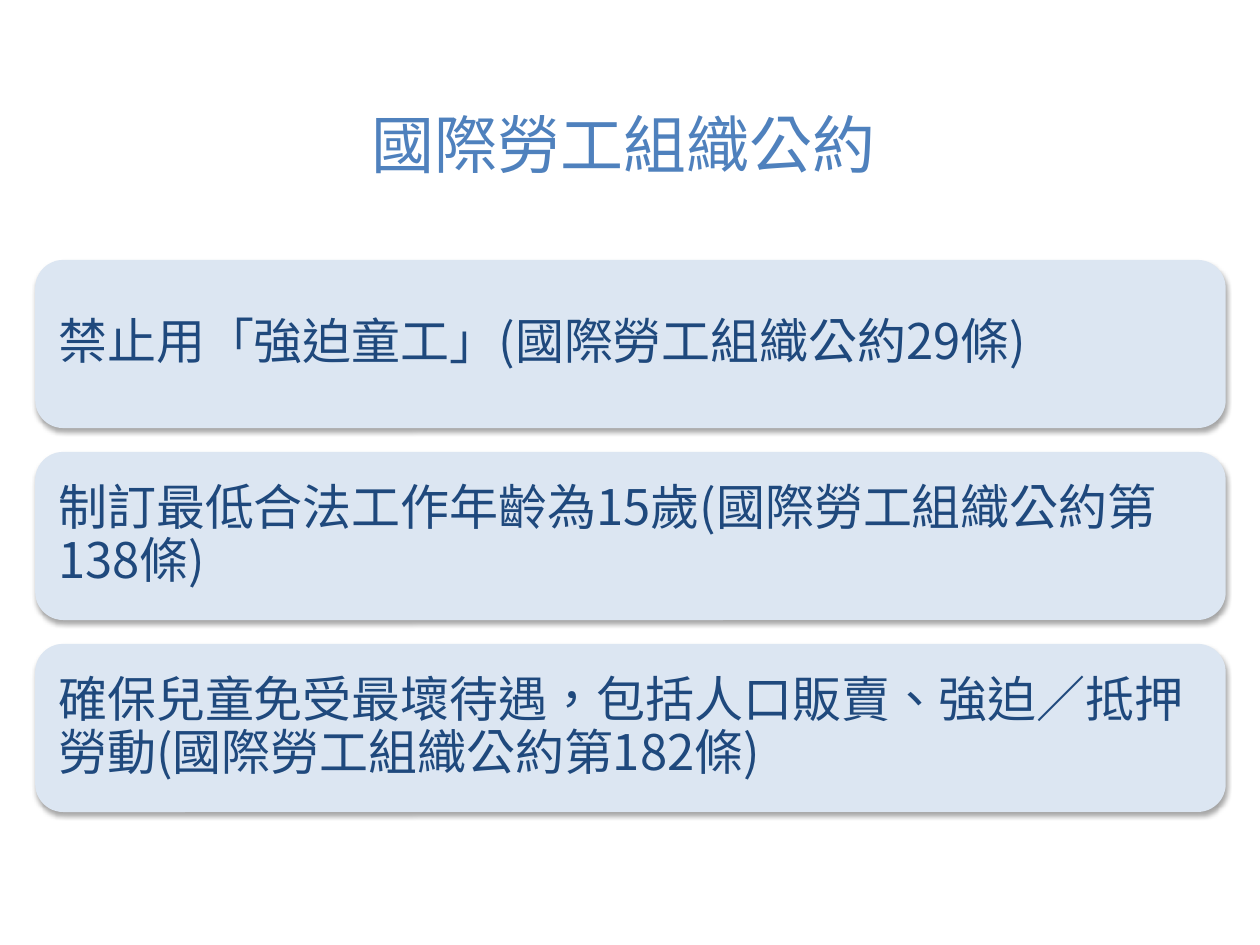
import lxml.etree
import pptx
import pptx.dml.color
import pptx.enum.shapes
import pptx.enum.text
import pptx.oxml
import pptx.oxml.ns
import pptx.util

Cm = pptx.util.Cm
Pt = pptx.util.Pt
RGBColor = pptx.dml.color.RGBColor

TITLE_BLUE = RGBColor(0x4F, 0x81, 0xBD)
PANEL_BLUE = RGBColor(0xDC, 0xE6, 0xF2)
TEXT_BLUE = RGBColor(0x1F, 0x49, 0x7D)
FONT = "Noto Sans CJK SC"

CONVENTIONS = [
    "禁止用「強迫童工」(國際勞工組織公約29條)",
    "制訂最低合法工作年齡為15歲(國際勞工組織公約第138條)",
    "確保兒童免受最壞待遇，包括人口販賣、強迫／抵押勞動(國際勞工組織公約第182條)",
]

SHADOW = (
    f'<a:effectLst {pptx.oxml.ns.nsdecls("a")}>'
    f'<a:outerShdw blurRad="{Pt(3.1)}" dist="{Pt(1.8)}" dir="5400000" rotWithShape="0">'
    '<a:srgbClr val="000000"><a:alpha val="35000"/></a:srgbClr>'
    "</a:outerShdw></a:effectLst>"
)


def write_text(text_frame, text, size, color, alignment):
    text_frame.word_wrap = True
    text_frame.vertical_anchor = pptx.enum.text.MSO_ANCHOR.MIDDLE
    text_frame.text = text
    paragraph = text_frame.paragraphs[0]
    paragraph.alignment = alignment
    run = paragraph.runs[0]
    run.font.size = Pt(size)
    run.font.name = FONT
    run.font.color.rgb = color
    properties = run._r.get_or_add_rPr()
    properties.set("lang", "zh-TW")
    east_asian = lxml.etree.SubElement(properties, pptx.oxml.ns.qn("a:ea"))
    east_asian.set("typeface", FONT)
    return paragraph


def add_title(slide, left, top, width, height):
    text_frame = slide.shapes.add_textbox(left, top, width, height).text_frame
    write_text(text_frame, "國際勞工組織公約", 36, TITLE_BLUE, pptx.enum.text.PP_ALIGN.CENTER)
    text_frame.margin_top = Cm(0.43)
    text_frame.margin_right = Cm(0.55)


def add_panel(slide, text, left, top, width, height):
    panel = slide.shapes.add_shape(
        pptx.enum.shapes.MSO_SHAPE.ROUNDED_RECTANGLE, left, top, width, height
    )
    panel.fill.solid()
    panel.fill.fore_color.rgb = PANEL_BLUE
    panel.line.fill.background()
    panel.shadow.inherit = False
    properties = panel._element.spPr
    properties.replace(
        properties.find(pptx.oxml.ns.qn("a:effectLst")), pptx.oxml.parse_xml(SHADOW)
    )
    text_frame = panel.text_frame
    text_frame.margin_left = text_frame.margin_right = Cm(0.3)
    text_frame.margin_top = text_frame.margin_bottom = Cm(0.3)
    paragraph = write_text(text_frame, text, 28, TEXT_BLUE, pptx.enum.text.PP_ALIGN.LEFT)
    paragraph.line_spacing = 0.9


def add_convention_list(slide, left, top, width, height):
    panel_height = Cm(3.39)
    pitch = (height - panel_height) // (len(CONVENTIONS) - 1)
    for index, text in enumerate(CONVENTIONS):
        add_panel(slide, text, left, top + index * pitch, width, panel_height)


def main():
    presentation = pptx.Presentation()
    presentation.slide_width = Cm(25.4)
    presentation.slide_height = Cm(19.05)
    slide = presentation.slides.add_slide(presentation.slide_layouts[6])
    add_title(slide, Cm(1.3), Cm(1.15), Cm(22.86), Cm(3.18))
    add_convention_list(slide, Cm(0.71), Cm(5.24), Cm(24), Cm(11.13))
    presentation.save("out.pptx")


if __name__ == "__main__":
    main()
